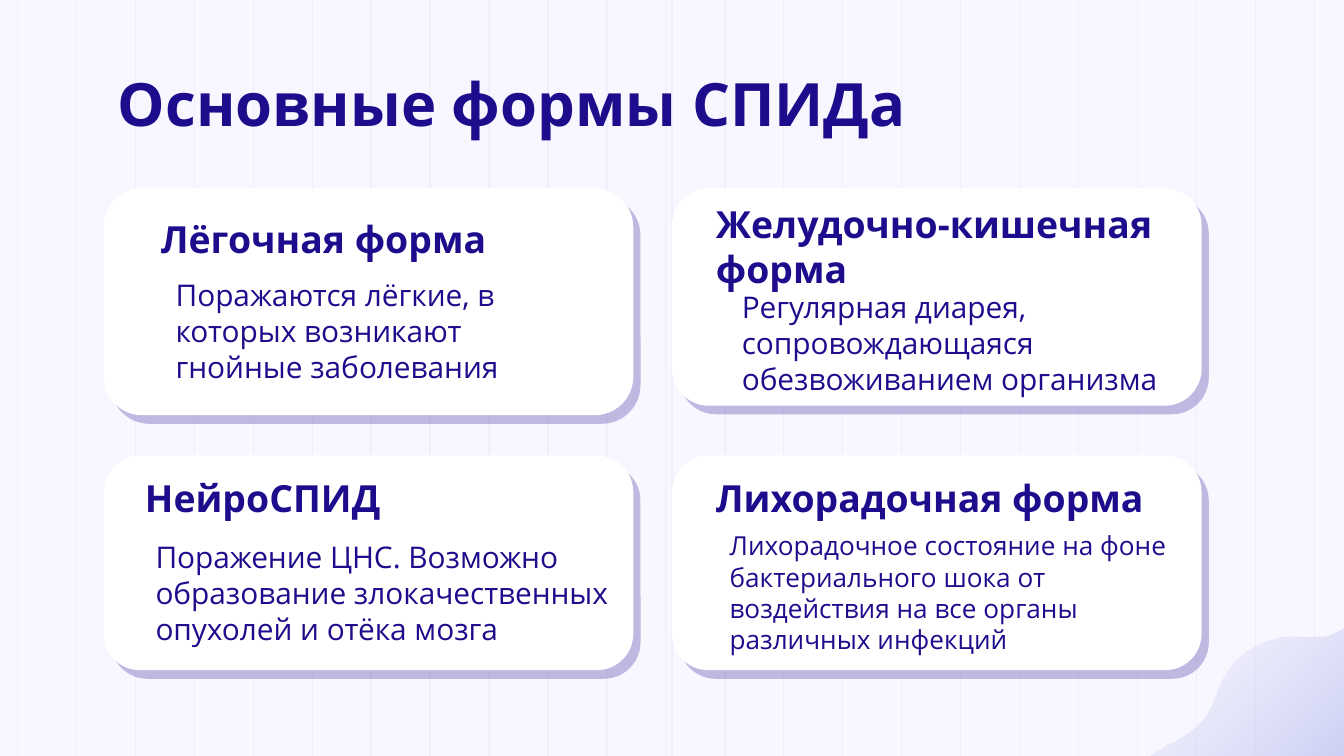
from lxml import etree
from pptx import Presentation
from pptx.dml.color import RGBColor
from pptx.enum.shapes import MSO_CONNECTOR, MSO_SHAPE
from pptx.enum.text import MSO_ANCHOR
from pptx.oxml.ns import qn
from pptx.util import Cm, Pt

LINE = MSO_CONNECTOR.STRAIGHT
ROUND = MSO_SHAPE.ROUNDED_RECTANGLE
TOP, MIDDLE = MSO_ANCHOR.TOP, MSO_ANCHOR.MIDDLE
NAVY, PALE, BLUE = "1D0D8D", "EFEEFC", "9BA6E9"


def color(code):
    return RGBColor.from_string(code)


def write(box, text, size, bold=False, anchor=TOP, pad=0.25, after=0):
    frame = slide.shapes.add_textbox(*map(Cm, box)).text_frame
    frame.word_wrap = True
    frame.vertical_anchor = anchor
    frame.margin_left = frame.margin_right = Cm(0.25)
    frame.margin_top = frame.margin_bottom = Cm(pad)
    para = frame.paragraphs[0]
    para.text = text
    para.space_after = Pt(after)
    para.font.name = "Open Sans"
    para.font.size = Pt(size)
    para.font.bold = bold
    para.font.color.rgb = color(NAVY)


deck = Presentation()
deck.slide_width, deck.slide_height = Cm(25.4), Cm(14.29)
slide = deck.slides.add_slide(deck.slide_layouts[6])
slide.background.fill.solid()
slide.background.fill.fore_color.rgb = color("F8F6FF")

# Even background stripes, plus one at the centre
first, last, count = 0.33, 24.84, 23
gap = (last - first) / (count - 1)
for x in [first + gap * i for i in range(count)] + [12.7]:
    stripe = slide.shapes.add_connector(LINE, Cm(x), Cm(0), Cm(x), Cm(14.29))
    stripe.line.color.rgb = color(PALE)
    stripe.line.width = Pt(0.75)
    etree.SubElement(stripe._element.spPr, qn("a:effectLst"))

# Corner wave: Bezier curves, each sampled in short steps
start = (26.29, 11.53)
curves = [
    ((26.04, 11.51), (25.86, 11.56), (25.68, 11.66)),
    ((25.55, 11.73), (25.45, 11.84), (25.32, 11.91)),
    ((25.02, 12.12), (24.61, 12.01), (24.26, 12.04)),
    ((23.83, 12.09), (23.42, 12.34), (23.19, 12.7)),
    ((22.99, 13), (22.94, 13.41), (22.68, 13.67)),
    ((22.5, 13.84), (22.3, 13.97), (22.07, 14.07)),
    ((21.87, 14.2), (21.64, 14.33), (21.44, 14.5)),
    ((21.29, 14.68), (21.16, 14.91), (21.11, 15.16)),
]
steps = 10
dots = []
here = start
for one, two, end in curves:
    for i in range(1, steps + 1):
        t = i / steps
        u = 1 - t
        dots.append([
            Cm(u**3 * a + 3 * u * u * t * b + 3 * u * t * t * c + t**3 * d)
            for a, b, c, d in zip(here, one, two, end)
        ])
    here = end
dots.append((Cm(26.29), Cm(15.16)))
pen = slide.shapes.build_freeform(Cm(start[0]), Cm(start[1]))
pen.add_line_segments(dots, close=True)
wave = pen.convert_to_shape()
wave.shadow.inherit = False
wave.line.fill.background()
wave.fill.gradient()
wave.fill.gradient_angle = 315
for stop, code, alpha in zip(wave.fill.gradient_stops, (PALE, BLUE), (13, 69)):
    stop.color.rgb = color(code)
tints = wave._element.spPr.iter(qn("a:srgbClr"))
for tint, alpha in zip(list(tints), (13, 69)):
    etree.SubElement(tint, qn("a:alpha"), val=str(alpha * 1000))

# Cards: place, then heading and body with their boxes, and body size
left, right, wide = 1.96, 12.7, 10.01
upper, lower = 3.56, 8.61
cards = [
    ((left, upper, wide, 4.29),
     "Лёгочная форма", (2.79, 4.19, 7.24, 0.64),
     "Поражаются лёгкие, в которых возникают гнойные заболевания",
     (3.07, 5.23, 7.98, 1.73), 16),
    ((right, upper, wide, 4.11),
     "Желудочно-кишечная форма", (13.28, 3.89, 9.32, 1.52),
     "Регулярная диарея, сопровождающаяся обезвоживанием организма",
     (13.77, 5.46, 9.42, 1.37), 16),
    ((left, lower, wide, 4.06),
     "НейроСПИД", (2.49, 8.84, 6.53, 1.12),
     "Поражение ЦНС. Возможно образование злокачественных опухолей "
     "и отёка мозга",
     (2.69, 10.19, 9.78, 1.45), 16),
    ((right, lower, wide, 4.06),
     "Лихорадочная форма", (13.28, 8.84, 9.42, 1.12),
     "Лихорадочное состояние на фоне бактериального шока "
     "от воздействия на все органы различных инфекций",
     (13.54, 10.01, 9.07, 2.01), 14),
]
for place, head, spot, body, area, size in cards:
    card = slide.shapes.add_shape(ROUND, *map(Cm, place))
    card.adjustments[0] = 0.17
    card.fill.solid()
    card.fill.fore_color.rgb = color("FFFFFF")
    card.line.fill.background()
    # Hard shadow to the lower right
    card.shadow.inherit = False
    glow = etree.SubElement(
        card._element.spPr.find(qn("a:effectLst")), qn("a:outerShdw"),
        blurRad="0", dist=str(Pt(6)), dir=str(50 * 60000),
        algn="bl", rotWithShape="0")
    tint = etree.SubElement(glow, qn("a:srgbClr"), val=NAVY)
    etree.SubElement(tint, qn("a:alpha"), val="25000")
    write(spot, head, 20, bold=True, anchor=MIDDLE)
    write(area, body, size, pad=0, after=16)

# Title
write((1.98, 1.02, 21.44, 1.96), "Основные формы СПИДа", 32, bold=True)

deck.save("out.pptx")
